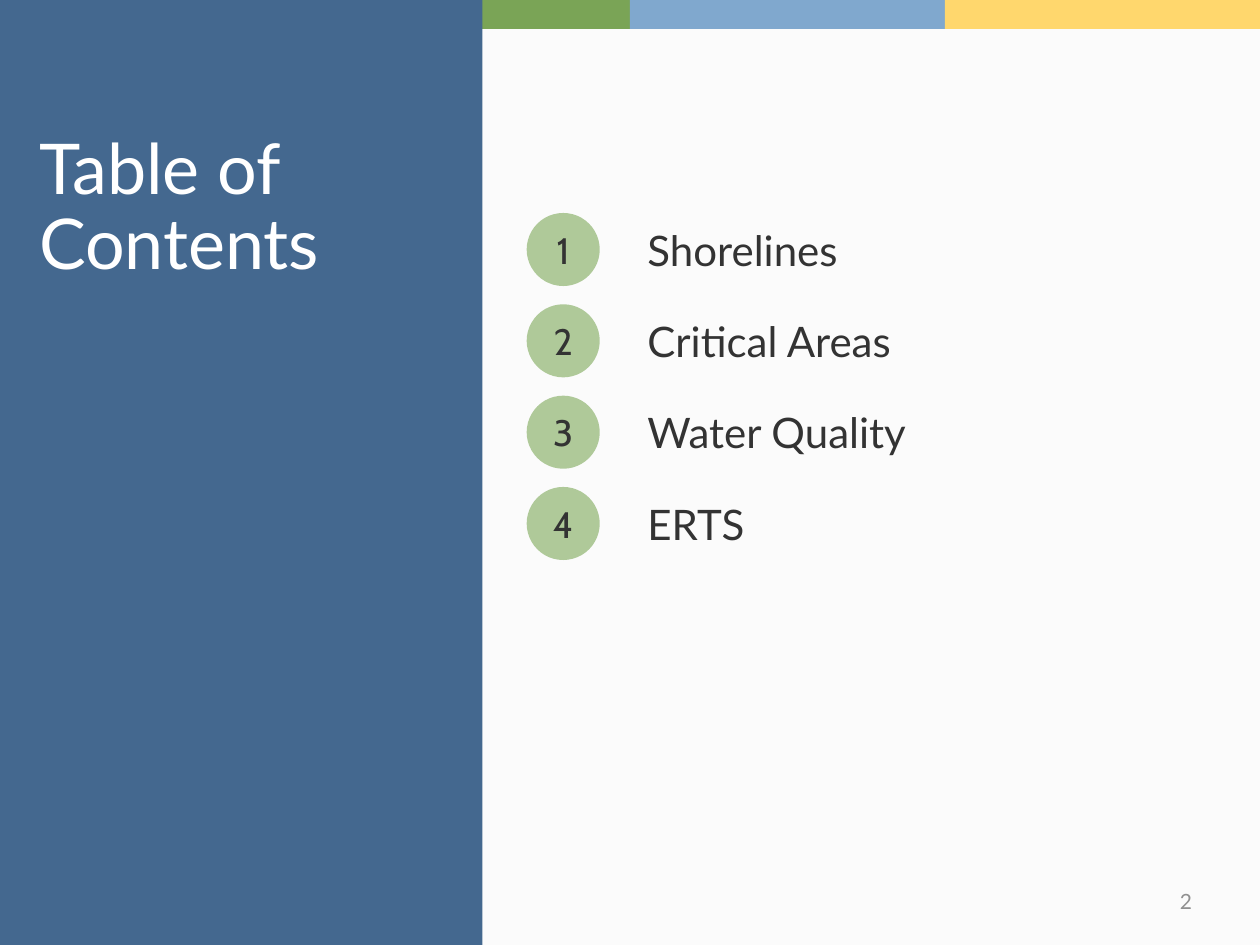
from pptx import Presentation
from pptx.dml.color import RGBColor
from pptx.enum.shapes import MSO_SHAPE as Shape
from pptx.enum.text import MSO_ANCHOR as Anchor, MSO_AUTO_SIZE as AutoSize, PP_ALIGN as Align
from pptx.util import Inches, Pt

# Content
TITLE = "Table of Contents"
TOPICS = ["Shorelines", "Critical Areas", "Water Quality", "ERTS"]
PAGE_NUMBER = "2"

# Look
BLUE, GREEN, SKY, YELLOW = "44688F", "7AA456", "80A8CE", "FFD76D"
BACKGROUND, BADGE, INK, GREY, WHITE = "FBFBFB", "AFC999", "333333", "909090", "FFFFFF"

# Layout, in inches
WIDTH, HEIGHT = 10, 7.5
PANEL_WIDTH, BAR_HEIGHT = 3.83, 0.23
BADGE_LEFT, BADGE_SIZE = 4.18, 0.58
LABEL_LEFT, LABEL_WIDTH, LABEL_HEIGHT = 5.04, 4.25, 0.5
FIRST_CENTRE, ROW_PITCH = 1.98, 0.725


def paint(fill, color):
    fill.solid()
    fill.fore_color.rgb = RGBColor.from_string(color)


def add_filled(kind, left, top, width, height, color):
    shape = slide.shapes.add_shape(
        kind, Inches(left), Inches(top), Inches(width), Inches(height))
    paint(shape.fill, color)
    shape.line.fill.background()
    shape.shadow.inherit = False
    return shape


def add_box(left, top, width, height):
    return slide.shapes.add_textbox(
        Inches(left), Inches(top), Inches(width), Inches(height))


def write(shape, text, size=24, font="Lato", color=INK, align=Align.LEFT,
          anchor=Anchor.MIDDLE, spacing=1.0, wrap=True):
    frame = shape.text_frame
    frame.word_wrap = wrap
    frame.auto_size = AutoSize.NONE
    frame.vertical_anchor = anchor
    frame.text = text
    paragraph = frame.paragraphs[0]
    paragraph.alignment = align
    paragraph.line_spacing = spacing
    paragraph.font.size = Pt(size)
    paragraph.font.name = font
    paragraph.font.color.rgb = RGBColor.from_string(color)


presentation = Presentation()
presentation.slide_width, presentation.slide_height = Inches(WIDTH), Inches(HEIGHT)
slide = presentation.slides.add_slide(presentation.slide_layouts[5])
paint(slide.background.fill, BACKGROUND)

# Colour bars along the top, then the side panel
bars = [BLUE, GREEN, SKY, YELLOW]
bar_width = WIDTH / len(bars)
for index, color in enumerate(bars):
    add_filled(Shape.RECTANGLE, index * bar_width, 0, bar_width, BAR_HEIGHT, color)
add_filled(Shape.RECTANGLE, 0, 0, PANEL_WIDTH, HEIGHT, BLUE)

# Title, brought in front of the panel
title = slide.shapes.title
title.left, title.top = Inches(0.21), Inches(1.01)
title.width, title.height = Inches(3.42), Inches(4.04)
write(title, TITLE, size=40, color=WHITE, anchor=Anchor.TOP, spacing=0.9)
title.element.getparent().append(title.element)

# Numbered topics
for index, topic in enumerate(TOPICS):
    centre = FIRST_CENTRE + index * ROW_PITCH
    badge = add_filled(Shape.OVAL, BADGE_LEFT, centre - BADGE_SIZE / 2,
                       BADGE_SIZE, BADGE_SIZE, BADGE)
    write(badge, str(index + 1), size=21, font="Cabin", align=Align.CENTER, wrap=False)
    label = add_box(LABEL_LEFT, centre - LABEL_HEIGHT / 2, LABEL_WIDTH, LABEL_HEIGHT)
    write(label, topic)

# Page number
write(add_box(7.31, 6.95, 2.25, 0.4), PAGE_NUMBER, size=12, color=GREY, align=Align.RIGHT)

presentation.save("out.pptx")
